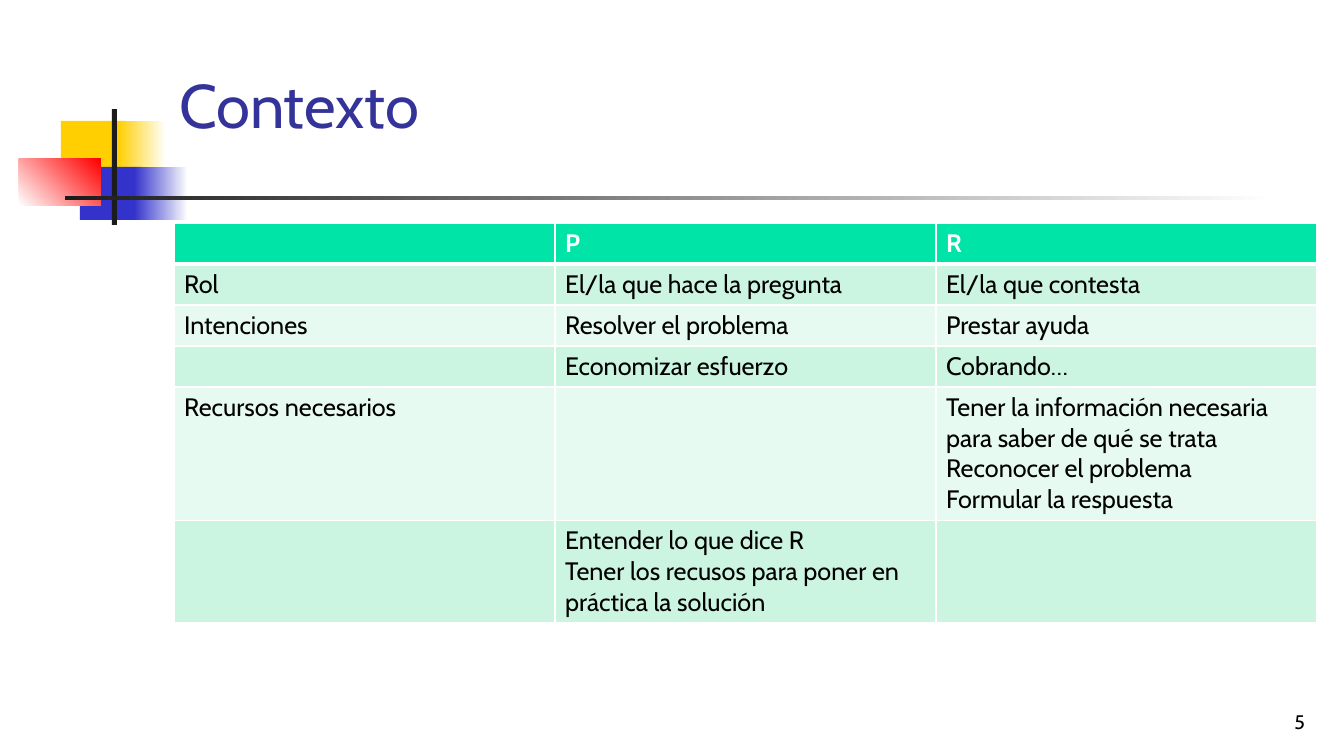
from lxml.etree import SubElement
from pptx import Presentation
from pptx.dml.color import RGBColor
from pptx.enum.shapes import MSO_SHAPE
from pptx.enum.text import MSO_ANCHOR, MSO_AUTO_SIZE, PP_ALIGN
from pptx.oxml.ns import qn
from pptx.util import Emu, Pt

FONT = "Cabin"
TITLE = "Contexto"
NUMBER = "5"
ROWS = [
    ("", "P", "R"),
    ("Rol", "El/la que hace la pregunta", "El/la que contesta"),
    ("Intenciones", "Resolver el problema", "Prestar ayuda"),
    ("", "Economizar esfuerzo", "Cobrando…"),
    ("Recursos necesarios", "",
     "Tener la información necesaria para saber de qué se trata\n"
     "Reconocer el problema\nFormular la respuesta"),
    ("", "Entender lo que dice R\n"
     "Tener los recusos para poner en práctica la solución", ""),
]
ROW_HEIGHTS = [41, 41, 41, 41, 133, 102]
COL_WIDTH = 381
HEADER, BANDS = "00E4A8", ("CCF5E1", "E7FAF1")
DECORATION = [
    ((61, 121, 65, 52), ("FFCF01",), 0),
    ((118, 121, 48, 52), ("FFCF01", "FFFFFF"), 0),
    ((80, 167, 62, 53), ("3333CC",), 0),
    ((134, 167, 54, 53), ("3333CC", "FFFFFF"), 0),
    ((19, 159, 82, 47), ("FFFFFF", "FF0000"), 45),
    ((112, 109, 5, 116), ("1C1C1C",), 0),
    ((65, 196, 1210, 4), ("1C1C1C", "FFFFFF"), 0),
]


def px(n):
    return Emu(round(n * 914400 / 100.8))


def rgb(color):
    return RGBColor.from_string(color)


def place(shape, x, y, w, h):
    shape.left, shape.top, shape.width, shape.height = map(px, (x, y, w, h))


def style(tf, size, color, bold=False, align=PP_ALIGN.LEFT):
    for p in tf.paragraphs:
        p.alignment = align
        p.font.size = Pt(size)
        for r in p.runs:
            r.font.name = FONT
            r.font.size = Pt(size)
            r.font.bold = bold
            r.font.color.rgb = rgb(color)


def add_block(s, box, colors, angle):
    sp = s.shapes.add_shape(MSO_SHAPE.RECTANGLE, *map(px, box))
    sp.shadow.inherit = False
    sp.line.fill.background()
    if len(colors) == 1:
        sp.fill.solid()
        sp.fill.fore_color.rgb = rgb(colors[0])
        return
    sp.fill.gradient()
    sp.fill.gradient_angle = angle
    for stop, color in zip(sp.fill.gradient_stops, colors):
        stop.color.rgb = rgb(color)


def add_borders(cell, top, bottom):
    tcPr = cell._tc.get_or_add_tcPr()
    for side, width in (("L", 1), ("R", 1), ("T", top), ("B", bottom)):
        ln = SubElement(tcPr, qn(f"a:ln{side}"), w=str(Pt(width)))
        fill = SubElement(ln, qn("a:solidFill"))
        SubElement(fill, qn("a:srgbClr"), val="FFFFFF")


def add_context_table(s):
    n = len(ROWS[0])
    frame = s.shapes.add_table(len(ROWS), n, px(174), px(223),
                               px(COL_WIDTH * n), px(sum(ROW_HEIGHTS)))
    table = frame.table
    for col in table.columns:
        col.width = px(COL_WIDTH)
    for i, texts in enumerate(ROWS):
        table.rows[i].height = px(ROW_HEIGHTS[i])
        head = i == 0
        for j, text in enumerate(texts):
            cell = table.cell(i, j)
            cell.text_frame.text = text
            style(cell.text_frame, 18, "FFFFFF" if head else "000000", head)
            add_borders(cell, 3 if i == 1 else 1, 3 if head else 1)
            cell.fill.solid()
            cell.fill.fore_color.rgb = rgb(HEADER if head else BANDS[(i - 1) % 2])


def main():
    prs = Presentation()
    prs.slide_width, prs.slide_height = px(1344), px(756)
    s = prs.slides.add_slide(prs.slide_layouts[5])
    for box, colors, angle in DECORATION:
        add_block(s, box, colors, angle)

    title = s.shapes.title
    place(title, 169, 23, 1145, 161)
    tf = title.text_frame
    tf.text = TITLE
    tf.auto_size = MSO_AUTO_SIZE.NONE
    tf.vertical_anchor = MSO_ANCHOR.MIDDLE
    style(tf, 44, "333399")

    add_context_table(s)

    number = s.shapes.add_textbox(px(1035), px(688), px(280), px(50))
    tf = number.text_frame
    tf.word_wrap = True
    tf.vertical_anchor = MSO_ANCHOR.BOTTOM
    tf.text = NUMBER
    style(tf, 14, "000000", align=PP_ALIGN.RIGHT)
    prs.save("out.pptx")


if __name__ == "__main__":
    main()
